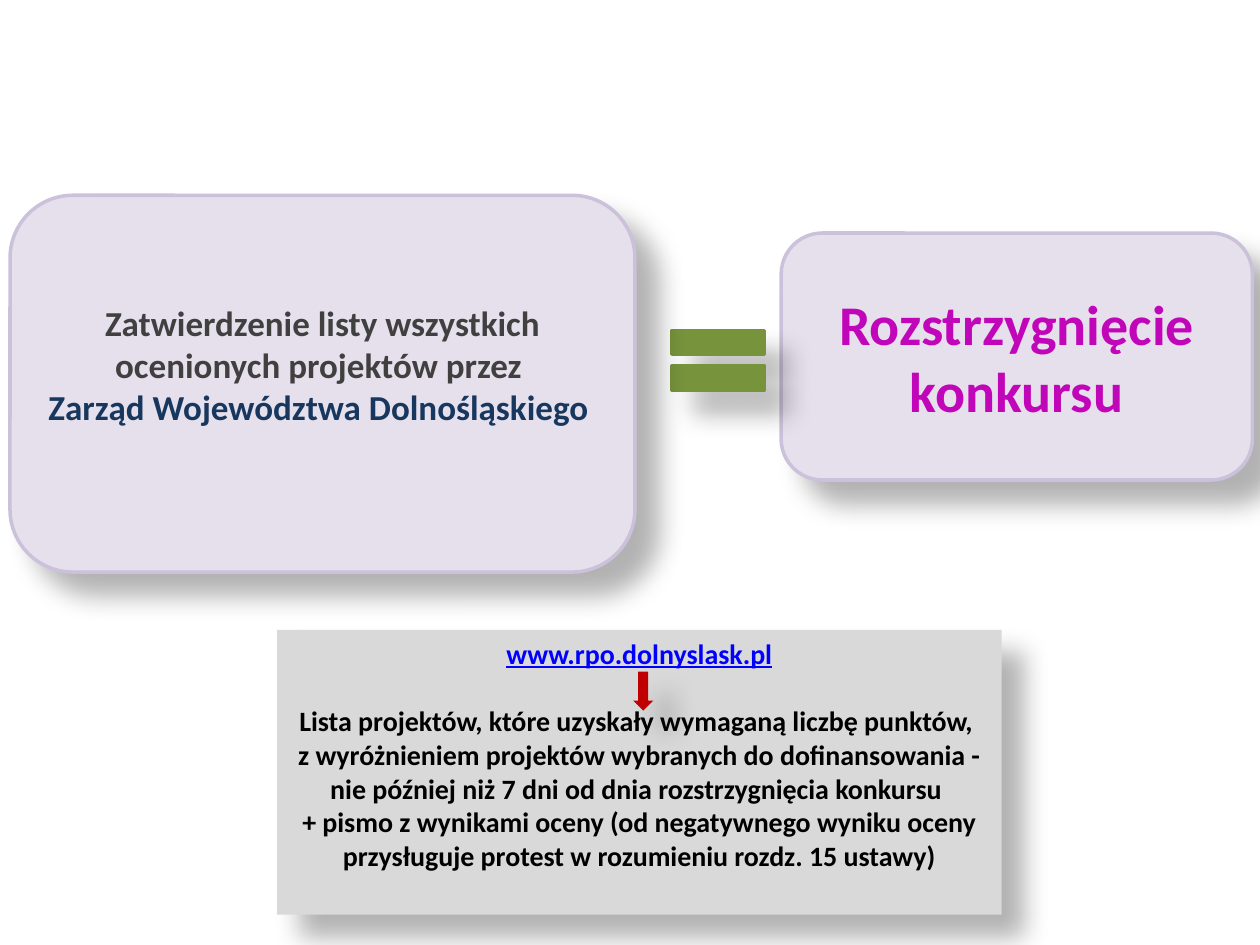
from dataclasses import dataclass

from lxml import etree
from pptx import Presentation
from pptx.dml.color import RGBColor
from pptx.enum.shapes import MSO_SHAPE as Shape
from pptx.enum.text import MSO_ANCHOR as Anchor, PP_ALIGN as Align
from pptx.oxml.ns import qn
from pptx.util import Inches, Pt


@dataclass(frozen=True)
class Theme:
    """Colours, type sizes and effects of the slide."""

    font: str = "Calibri"
    panel: str = "E6E0EC"
    panel_line: str = "CCC1DA"
    note: str = "D9D9D9"
    sign: str = "77933C"
    arrow: str = "C00000"
    result: str = "C105B8"
    body: str = "404040"
    board: str = "17375E"
    link: str = "0000FF"
    black: str = "000000"
    result_size: int = 32
    body_size: int = 20
    note_size: int = 16
    line_width: int = 2
    shadow_blur: int = 15
    shadow_distance: int = 18
    shadow_angle: int = 45
    shadow_opacity: int = 30


THEME = Theme()


def add_shadow(shape):
    """Give the shape a soft shadow towards the lower right."""
    shape.shadow.inherit = False
    effects = shape._element.spPr.find(qn("a:effectLst"))
    shadow = etree.SubElement(
        effects,
        qn("a:outerShdw"),
        blurRad=str(Pt(THEME.shadow_blur)),
        dist=str(Pt(THEME.shadow_distance)),
        dir=str(THEME.shadow_angle * 60000),
        algn="tl",
        rotWithShape="0",
    )
    color = etree.SubElement(shadow, qn("a:srgbClr"), val=THEME.black)
    etree.SubElement(color, qn("a:alpha"), val=str(THEME.shadow_opacity * 1000))


def add_block(slide, kind, box, fill, line=None):
    """Add a filled, shadowed shape in the box, outlined if a line colour is given."""
    shape = slide.shapes.add_shape(kind, *(Inches(length) for length in box))
    shape.fill.solid()
    shape.fill.fore_color.rgb = RGBColor.from_string(fill)
    if line:
        shape.line.color.rgb = RGBColor.from_string(line)
        shape.line.width = Pt(THEME.line_width)
    else:
        shape.line.fill.background()
    add_shadow(shape)
    return shape


def write_paragraphs(shape, paragraphs, size, anchor=Anchor.MIDDLE):
    """Fill the shape with centred bold paragraphs given as text and colour."""
    text_frame = shape.text_frame
    text_frame.word_wrap = True
    text_frame.vertical_anchor = anchor
    text_frame.text = "\n".join(text for text, _ in paragraphs)
    for paragraph, (_, color) in zip(text_frame.paragraphs, paragraphs):
        paragraph.alignment = Align.CENTER
        for run in paragraph.runs:
            run.font.name = THEME.font
            run.font.size = Pt(size)
            run.font.bold = True
            run.font.color.rgb = RGBColor.from_string(color)
    return text_frame


def add_result(slide, box):
    """Add the panel that names the outcome."""
    panel = add_block(slide, Shape.ROUNDED_RECTANGLE, box, THEME.panel, THEME.panel_line)
    write_paragraphs(panel, [("Rozstrzygnięcie konkursu", THEME.result)], THEME.result_size)


def add_approval(slide, box):
    """Add the panel on the approval of the project list."""
    panel = add_block(slide, Shape.ROUNDED_RECTANGLE, box, THEME.panel, THEME.panel_line)
    text_frame = write_paragraphs(
        panel,
        [
            ("Zatwierdzenie listy wszystkich ocenionych projektów przez ", THEME.body),
            ("Zarząd Województwa Dolnośląskiego ", THEME.board),
        ],
        THEME.body_size,
    )
    text_frame.margin_bottom = Inches(0.35)


def add_publication(slide, box):
    """Add the note on publishing the list, with an arrow below the address."""
    left, top, width, _ = box
    note = add_block(slide, Shape.RECTANGLE, box, THEME.note)
    details = (
        "Lista projektów, które uzyskały wymaganą liczbę punktów, \v"
        "z wyróżnieniem projektów wybranych do dofinansowania - "
        "nie później niż 7 dni od dnia rozstrzygnięcia konkursu \v"
        "+ pismo z wynikami oceny (od negatywnego wyniku oceny "
        "przysługuje protest w rozumieniu rozdz. 15 ustawy)"
    )
    text_frame = write_paragraphs(
        note,
        [("www.rpo.dolnyslask.pl", THEME.link), (details, THEME.black)],
        THEME.note_size,
        Anchor.TOP,
    )
    address, list_details = text_frame.paragraphs
    address.runs[0].font.underline = True
    list_details.space_before = Pt(19.5)
    arrow_width = 0.16
    arrow_left = left + (width - arrow_width) / 2 + 0.03
    add_block(slide, Shape.DOWN_ARROW, (arrow_left, top + 0.33, arrow_width, 0.31), THEME.arrow)


def main():
    """Build the slide and save it."""
    presentation = Presentation()
    presentation.slide_width = Inches(10)
    presentation.slide_height = Inches(7.5)
    slide = presentation.slides.add_slide(presentation.slide_layouts[6])
    add_result(slide, (6.2, 1.85, 3.74, 1.96))
    add_block(slide, Shape.MATH_EQUAL, (5.2, 2.46, 1, 0.8), THEME.sign, THEME.sign)
    add_approval(slide, (0.08, 1.55, 4.96, 2.99))
    add_publication(slide, (2.2, 5, 5.75, 2.26))
    presentation.save("out.pptx")


if __name__ == "__main__":
    main()
